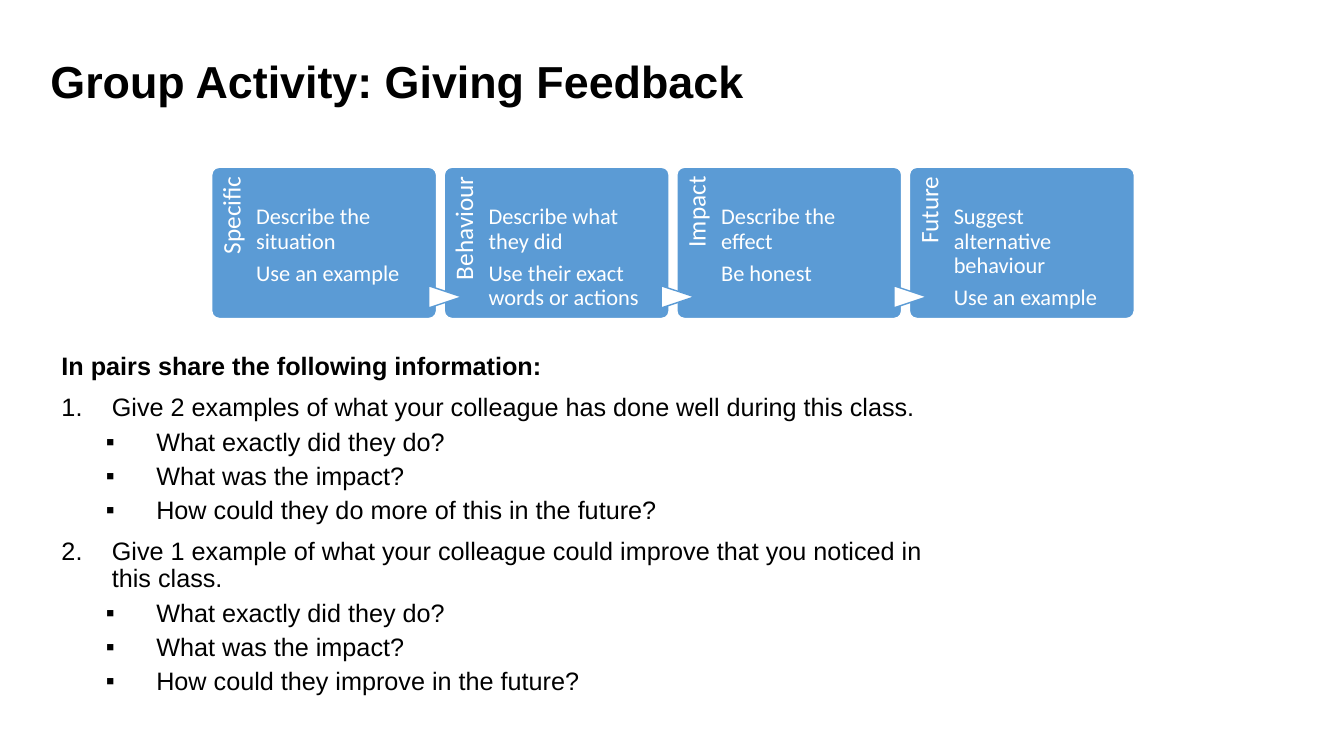
"""Build the Group Activity slide on giving feedback."""
from dataclasses import dataclass

from lxml import etree
from pptx import Presentation
from pptx.dml.color import RGBColor
from pptx.enum.shapes import MSO_SHAPE
from pptx.enum.text import MSO_ANCHOR, MSO_AUTO_SIZE, PP_ALIGN
from pptx.oxml.ns import qn
from pptx.util import Inches, Pt

ROUNDED, EXTRACT = MSO_SHAPE.ROUNDED_RECTANGLE, MSO_SHAPE.FLOWCHART_EXTRACT
TOP, MIDDLE = MSO_ANCHOR.TOP, MSO_ANCHOR.MIDDLE
LEFT, RIGHT = PP_ALIGN.LEFT, PP_ALIGN.RIGHT
NO_FIT = MSO_AUTO_SIZE.NONE


@dataclass(frozen=True)
class Theme:
    blue: RGBColor = RGBColor(0x5B, 0x9B, 0xD5)
    white: RGBColor = RGBColor(0xFF, 0xFF, 0xFF)
    black: RGBColor = RGBColor(0x00, 0x00, 0x00)
    heading_font: str = "Arial"
    card_font: str = "Calibri"
    title_size: int = 32
    body_size: int = 18
    label_size: int = 18
    card_size: int = 16


THEME = Theme()
FIRST_LEFT, LAST_LEFT = 2.1, 9.02
CARD_TOP, CARD_WIDTH, CARD_HEIGHT = 1.66, 2.23, 1.5
CARDS = [
    ("Specific", ["Describe the situation", "Use an example"]),
    ("Behaviour", ["Describe what they did", "Use their exact words or actions"]),
    ("Impact", ["Describe the effect", "Be honest"]),
    ("Future", ["Suggest alternative behaviour", "Use an example"]),
]
PITCH = (LAST_LEFT - FIRST_LEFT) / (len(CARDS) - 1)

HEADING, NUMBERED, BULLETED = "heading", "numbered", "bulleted"
LEVELS = {
    HEADING: (0, 0.25, -0.25, 0),
    NUMBERED: (0, 0.5, -0.5, 10),
    BULLETED: (1, 0.94, -0.5, 5),
}
TASKS = [
    (HEADING, "In pairs share the following information:"),
    (NUMBERED, "Give 2 examples of what your colleague has done well during this class."),
    (BULLETED, "What exactly did they do?"),
    (BULLETED, "What was the impact?"),
    (BULLETED, "How could they do more of this in the future?"),
    (NUMBERED, "Give 1 example of what your colleague could improve that you noticed in this class."),
    (BULLETED, "What exactly did they do?"),
    (BULLETED, "What was the impact?"),
    (BULLETED, "How could they improve in the future?"),
]


def add_run(para, text, font, size, color, bold=False):
    para.line_spacing = 0.9
    span = para.add_run()
    span.text = text
    span.font.name, span.font.size, span.font.bold = font, Pt(size), bold
    span.font.color.rgb = color


def place(shape, left, top, width, height):
    shape.left, shape.top = Inches(left), Inches(top)
    shape.width, shape.height = Inches(width), Inches(height)


deck = Presentation()
deck.slide_width, deck.slide_height = Inches(13.33), Inches(7.5)
page = deck.slides.add_slide(deck.slide_layouts[1])
title, body = page.placeholders

place(title, 0.4, 0.3, 9.17, 1.06)
title.text_frame.vertical_anchor = MIDDLE
title.text_frame.auto_size = NO_FIT
title_para = title.text_frame.paragraphs[0]
title_para.alignment = LEFT
add_run(title_para, "Group Activity: Giving Feedback",
        THEME.heading_font, THEME.title_size, THEME.black, True)

for column, (label, points) in enumerate(CARDS):
    left = FIRST_LEFT + column * PITCH
    outlines = [(ROUNDED, (left, CARD_TOP, CARD_WIDTH, CARD_HEIGHT), THEME.blue, THEME.white)]
    if column:
        outlines.append((EXTRACT, (left - 0.1, 2.78, 0.22, 0.33), THEME.white, THEME.blue))
    for preset, frame, fill, line in outlines:
        shape = page.shapes.add_shape(preset, *map(Inches, frame))
        shape.shadow.inherit = False
        shape.fill.solid()
        shape.fill.fore_color.rgb = fill
        shape.line.color.rgb = line
        shape.line.width = Pt(1)
        if preset == ROUNDED:
            shape.adjustments[0] = 0.05
        else:
            shape.rotation = 90

    texts = [
        ((left - 0.39, 2.05, 1.23, 0.45), 270, (0.07, 0.09), RIGHT, THEME.label_size, [label]),
        ((left + 0.44, CARD_TOP, 1.66, CARD_HEIGHT), 0, (0.38, 0), LEFT, THEME.card_size, points),
    ]
    for frame, angle, (inset_top, inset_right), alignment, size, lines in texts:
        box = page.shapes.add_textbox(*map(Inches, frame))
        box.rotation = angle
        text = box.text_frame
        text.word_wrap = True
        text.margin_left = text.margin_bottom = 0
        text.margin_top, text.margin_right = Inches(inset_top), Inches(inset_right)
        for index, line in enumerate(lines):
            para = text.add_paragraph() if index else text.paragraphs[0]
            para.alignment = alignment
            para.space_after = Pt(0.35 * size)
            add_run(para, line, THEME.card_font, size, THEME.white)

place(body, 0.51, 3.46, 8.95, 4.04)
body.text_frame.vertical_anchor = TOP
body.text_frame.auto_size = NO_FIT
for index, (kind, line) in enumerate(TASKS):
    para = body.text_frame.add_paragraph() if index else body.text_frame.paragraphs[0]
    level, margin, indent, space_before = LEVELS[kind]
    para.level = level
    para.alignment = LEFT
    para.space_before = Pt(space_before)
    add_run(para, line, THEME.heading_font, THEME.body_size, THEME.black, kind == HEADING)
    properties = para._p.get_or_add_pPr()
    properties.set("marL", str(Inches(margin)))
    properties.set("indent", str(Inches(indent)))
    if kind == HEADING:
        etree.SubElement(properties, qn("a:buNone"))
    else:
        etree.SubElement(properties, qn("a:buFont"), typeface=THEME.heading_font)
        if kind == NUMBERED:
            etree.SubElement(properties, qn("a:buAutoNum"), type="arabicPeriod")
        else:
            etree.SubElement(properties, qn("a:buChar"), char="▪")

deck.save("out.pptx")
